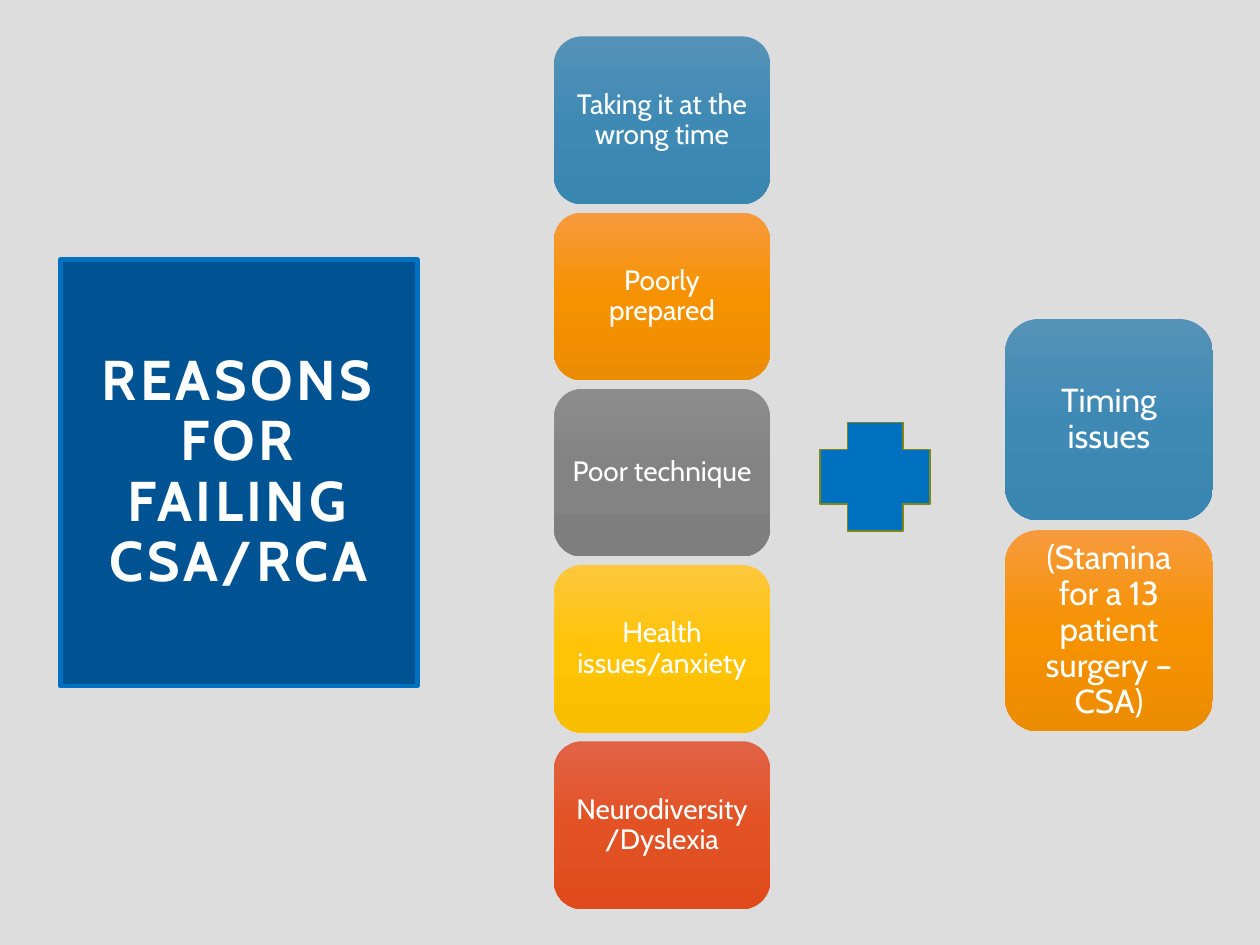
"""Build the slide on reasons for failing the CSA/RCA."""
from copy import deepcopy
from pptx import Presentation
from pptx.dml.color import RGBColor as RGB
from pptx.enum.shapes import MSO_SHAPE as SHAPE
from pptx.enum.text import MSO_ANCHOR as ANCHOR, PP_ALIGN as ALIGN
from pptx.oxml.ns import qn
from pptx.util import Pt

COLORS = {"bg": "DDDDDD", "title": "005392", "accent": "0070C0", "olive": "7B871D", "text": "FFFFFF"}
GRADIENTS = {
    "blue": ("5592B7", "3F8AB5", "3986B1"),
    "orange": ("F79A3D", "F69200", "EC8C00"),
    "gray": ("8C8C8C", "838383", "7E7E7E"),
    "yellow": ("FEC73E", "FFC405", "F9BE00"),
    "red": ("E16346", "E25224", "DF4B1D"),
}
REASONS = [
    ("Taking it at the wrong time", "blue"),
    ("Poorly prepared", "orange"),
    ("Poor technique", "gray"),
    ("Health issues/anxiety", "yellow"),
    ("Neurodiversity /Dyslexia", "red"),
]
EXTRAS = [("Timing issues", "blue"), ("(Stamina for a 13 patient surgery – CSA)", "orange")]
COLUMNS = [
    (REASONS, 316.6, 20.8, 123.4, 95.8, 100.7, 16, 4.8, 2.4),
    (EXTRAS, 574.3, 182.3, 118.8, 115, 120.6, 19, 5.7, 2.9),
]


def add_shape(kind, x, y, w, h):
    sp = s.shapes.add_shape(kind, Pt(x), Pt(y), Pt(w), Pt(h))
    sp.shadow.inherit = False
    return sp


def set_text(sp, text, size, inset_x, inset_y):
    tf = sp.text_frame
    tf.text = text
    tf.word_wrap = True
    tf.vertical_anchor = ANCHOR.MIDDLE
    tf.margin_left = tf.margin_right = Pt(inset_x)
    tf.margin_top = tf.margin_bottom = Pt(inset_y)
    p = tf.paragraphs[0]
    p.alignment = ALIGN.CENTER
    p.line_spacing = 0.9
    r = p.runs[0]
    r.font.name = "Cabin"
    r.font.size = Pt(size)
    r.font.color.rgb = RGB.from_string(COLORS["text"])
    return r


prs = Presentation()
prs.slide_width, prs.slide_height = Pt(720), Pt(540)
s = prs.slides.add_slide(prs.slide_layouts[6])
s.background.fill.solid()
s.background.fill.fore_color.rgb = RGB.from_string(COLORS["bg"])

title = add_shape(SHAPE.RECTANGLE, 34.5, 148.3, 204, 243.7)
plus = add_shape(SHAPE.CROSS, 468.7, 241.4, 62.8, 62.2)
for sp, fill, line, width in [(title, "title", "accent", 2.5), (plus, "accent", "olive", 1)]:
    sp.fill.solid()
    sp.fill.fore_color.rgb = RGB.from_string(COLORS[fill])
    sp.line.color.rgb = RGB.from_string(COLORS[line])
    sp.line.width = Pt(width)
r = set_text(title, "REASONS FOR FAILING CSA/RCA", 32, 14.4, 14.4)
r.font.bold = True
r.font._element.set("spc", "200")

for items, x, top, w, h, pitch, size, inset_x, inset_y in COLUMNS:
    for i, (text, color) in enumerate(items):
        tile = add_shape(SHAPE.ROUNDED_RECTANGLE, x, top + i * pitch, w, h)
        tile.line.fill.background()
        tile.fill.gradient()
        tile.fill.gradient_angle = 270
        stops = tile._element.spPr.find(qn("a:gradFill")).find(qn("a:gsLst"))
        stops.append(deepcopy(stops[-1]))
        for stop, position, shade in zip(tile.fill.gradient_stops, (0, 0.5, 1), GRADIENTS[color]):
            stop.position = position
            stop.color.rgb = RGB.from_string(shade)
        set_text(tile, text, size, inset_x, inset_y)

prs.save("out.pptx")
